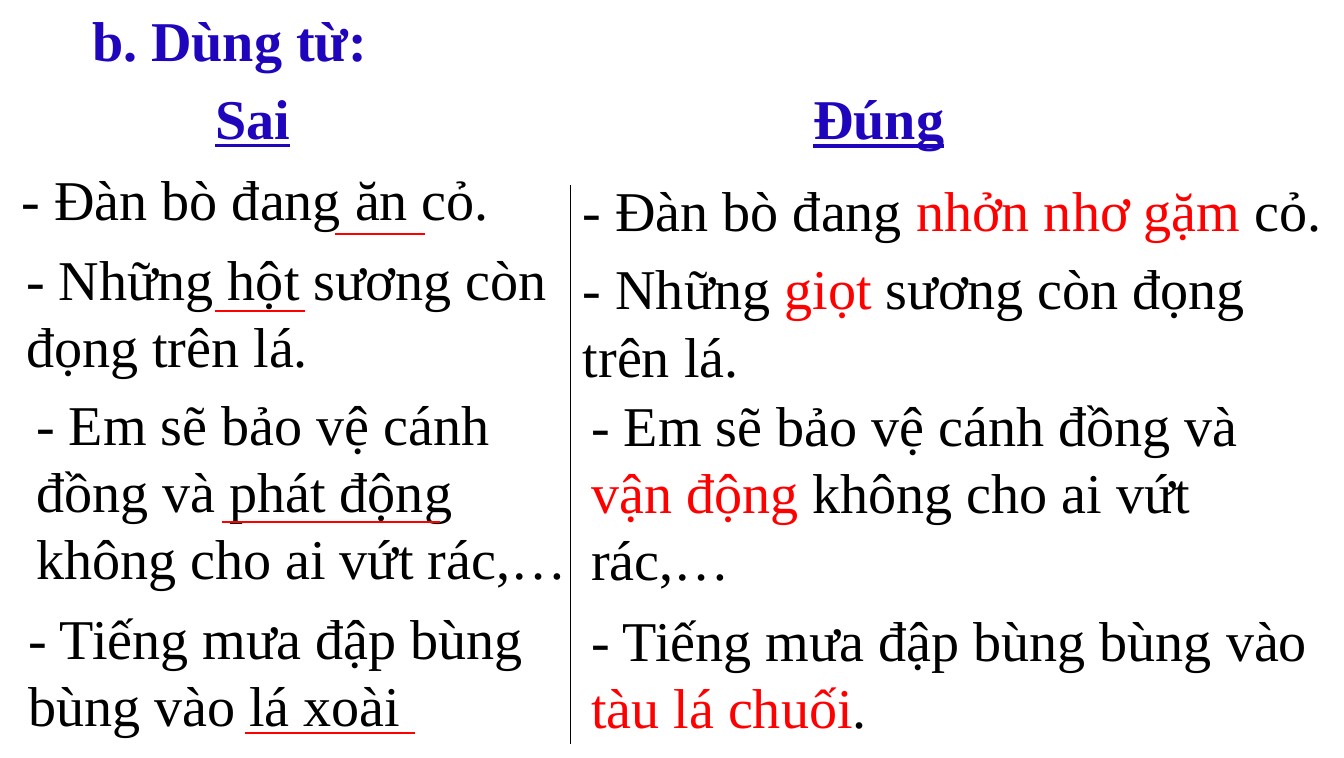
from pptx import Presentation
from pptx.dml.color import RGBColor as RGB
from pptx.enum.shapes import MSO_CONNECTOR as CONN
from pptx.enum.text import MSO_ANCHOR as ANCHOR, MSO_AUTO_SIZE as FIT, PP_ALIGN as ALIGN
from pptx.oxml.ns import qn
from pptx.util import Cm, Pt
from lxml.etree import SubElement

THEME = {
    "heading": RGB(0x1F, 0x05, 0xBB),
    "body": RGB(0, 0, 0),
    "mark": RGB(0xFF, 0, 0),
    "font": {"name": "Times New Roman", "size": Pt(40)},
    "thin": Pt(0.75),
    "thick": Pt(1.5),
}
FRAME = {"word_wrap": True, "auto_size": FIT.NONE, "vertical_anchor": ANCHOR.TOP}


def write(sp, box, parts, colors, **style):
    sp.left, sp.top, sp.width, sp.height = [Cm(v) for v in box]
    tf = sp.text_frame
    for key, value in FRAME.items():
        setattr(tf, key, value)
    p = tf.paragraphs[0]
    p.alignment = ALIGN.LEFT
    for i, text in enumerate(parts):
        r = p.add_run()
        r.text = text
        for key, value in {**THEME["font"], **style}.items():
            setattr(r.font, key, value)
        r.font.color.rgb = THEME[colors[i % len(colors)]]


def draw_line(x1, y1, x2, y2, color, width):
    ln = s.shapes.add_connector(CONN.STRAIGHT, Cm(x1), Cm(y1), Cm(x2), Cm(y2))
    ln.line.color.rgb = THEME[color]
    ln.line.width = THEME[width]
    SubElement(ln._element.spPr, qn("a:effectLst"))


prs = Presentation()
prs.slide_width, prs.slide_height = Cm(33.78), Cm(19.05)
s = prs.slides.add_slide(prs.slide_layouts[5])

write(s.shapes.title, (2.06, 0, 7.52, 1.96), ["b. Dùng từ:"], ["heading"], bold=True)

headings = [
    ("Sai", (5.16, 1.96, 3.18, 1.96)),
    ("Đúng", (20.19, 1.98, 3.84, 1.96)),
]
for text, box in headings:
    sp = s.shapes.add_textbox(0, 0, 0, 0)
    write(sp, box, [text], ["heading"], bold=True, underline=True)

sentences = [
    ((0.3, 4.01, 14.63, 1.96), ["- Đàn bò đang ăn cỏ."]),
    ((0.41, 6.02, 14.63, 3.68), ["- Những hột sương còn đọng trên lá."]),
    ((0.66, 9.65, 13.92, 5.38),
     ["- Em sẽ bảo vệ cánh đồng và phát động không cho ai vứt rác,…"]),
    ((0.46, 15.04, 14.53, 3.68), ["- Tiếng mưa đập bùng bùng vào lá xoài"]),
    ((14.4, 4.29, 19.23, 1.96), ["- Đàn bò đang ", "nhởn nhơ gặm", " cỏ."]),
    ((14.4, 6.25, 19.23, 3.68), ["- Những ", "giọt ", "sương còn đọng trên lá."]),
    ((14.61, 9.68, 18.8, 5.38),
     ["- Em sẽ bảo vệ cánh đồng và ", "vận động ", "không cho ai vứt rác,…"]),
    ((14.61, 15.09, 18.59, 3.68),
     ["- Tiếng mưa đập bùng bùng vào ", "tàu lá chuối", "."]),
]
for box, parts in sentences:
    write(s.shapes.add_textbox(0, 0, 0, 0), box, parts, ["body", "mark"])

draw_line(14.35, 4.65, 14.35, 18.69, "body", "thin")
underlines = [(8.43, 10.69, 5.89), (5.41, 7.67, 7.82),
              (5.59, 11.05, 13.13), (6.17, 10.44, 18.42)]
for x1, x2, y in underlines:
    draw_line(x1, y, x2, y, "mark", "thick")

prs.save("out.pptx")
